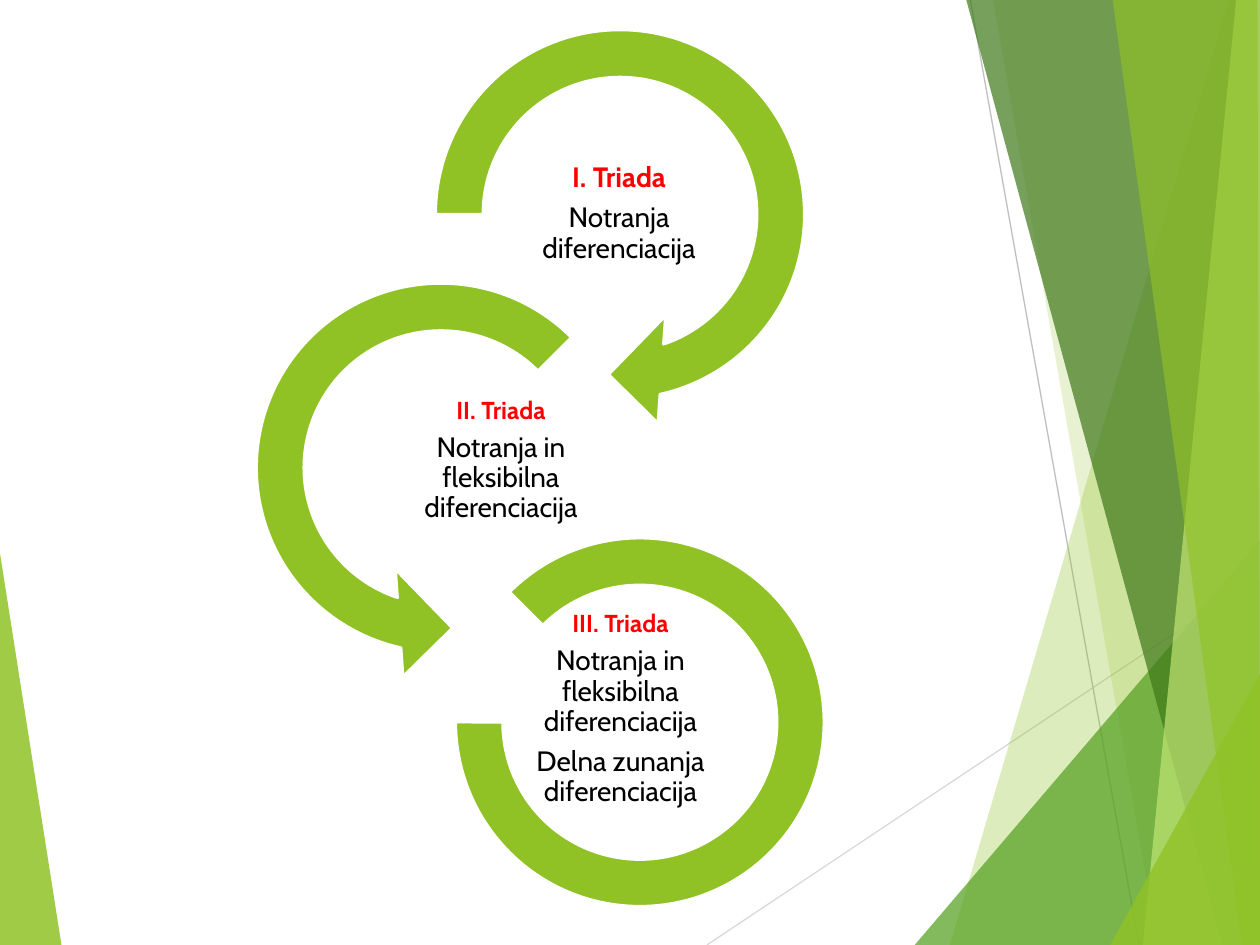
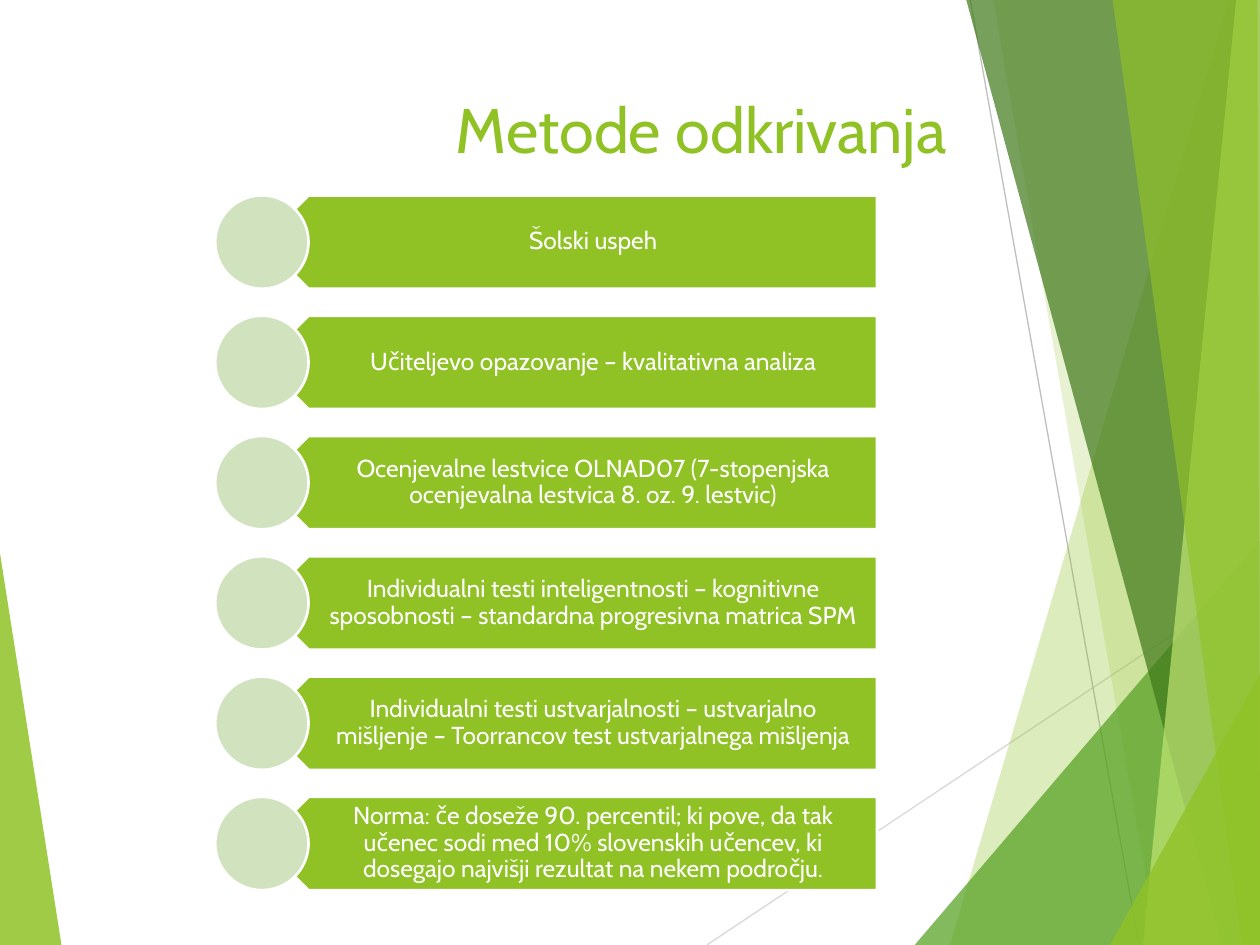
"""Build two slides on differentiation by triad and methods of identification."""
from lxml import etree
from pptx import Presentation
from pptx.dml.color import RGBColor
from pptx.enum.shapes import MSO_CONNECTOR, MSO_SHAPE
from pptx.enum.text import MSO_ANCHOR, PP_ALIGN
from pptx.oxml.ns import qn
from pptx.util import Cm, Pt

CENTER, RIGHT = PP_ALIGN.CENTER, PP_ALIGN.RIGHT
TOP, MIDDLE = MSO_ANCHOR.TOP, MSO_ANCHOR.MIDDLE
STRAIGHT = MSO_CONNECTOR.STRAIGHT
RIGHT_TURN = MSO_SHAPE.CIRCULAR_ARROW
LEFT_TURN = MSO_SHAPE.LEFT_CIRCULAR_ARROW
ARC = MSO_SHAPE.BLOCK_ARC
PLATE, DISC = MSO_SHAPE.PENTAGON, MSO_SHAPE.OVAL

FONT = "Cabin"
LIME = RGBColor(0x90, 0xC2, 0x26)
GREEN = RGBColor(0x54, 0xA0, 0x21)
FOREST = RGBColor(0x3F, 0x78, 0x19)
PALE_LIME = RGBColor(0xC0, 0xE4, 0x74)
PALE_GREEN = RGBColor(0xD1, 0xE3, 0xBE)
LIGHT_GREY = RGBColor(0xD9, 0xD9, 0xD9)
GREY = RGBColor(0xBF, 0xBF, 0xBF)
WHITE = RGBColor(0xFF, 0xFF, 0xFF)
BLACK = RGBColor(0, 0, 0)
RED = RGBColor(0xFF, 0, 0)

WIDTH, HEIGHT = 25.4, 19.05
TOP_RIGHT, BOTTOM_RIGHT = (WIDTH, 0), (WIDTH, HEIGHT)

RAYS = [
    ((14.25, HEIGHT), (WIDTH, 11.62), LIGHT_GREY),
    ((19.56, 0), (22.96, HEIGHT), GREY),
]
LEFT_WEDGE = ([(0, 11.15), (1.24, HEIGHT), (0, HEIGHT)], LIME, 85)
RIGHT_FACETS = [
    ([(24.77, 0), (19.15, HEIGHT), BOTTOM_RIGHT, TOP_RIGHT], LIME, 30),
    ([(20.02, 0), (23.34, HEIGHT), BOTTOM_RIGHT, TOP_RIGHT], LIME, 20),
    ([(18.44, HEIGHT), (WIDTH, 10.9), BOTTOM_RIGHT], GREEN, 72),
    ([(19.48, 0), (24.64, HEIGHT), BOTTOM_RIGHT, TOP_RIGHT], FOREST, 70),
    ([(24.92, 0), (23.04, HEIGHT), BOTTOM_RIGHT, TOP_RIGHT], PALE_LIME, 70),
    ([(22.43, 0), (25.04, HEIGHT), BOTTOM_RIGHT, (25.35, 0)], LIME, 65),
    ([(22.38, HEIGHT), (WIDTH, 13.59), BOTTOM_RIGHT], LIME, 80),
]


def paint(shape, color, outline=None, opacity=100):
    shape.shadow.inherit = False
    shape.fill.solid()
    shape.fill.fore_color.rgb = color
    if opacity < 100:
        tint = shape._element.spPr.find(qn("a:solidFill")).find(qn("a:srgbClr"))
        etree.SubElement(tint, qn("a:alpha"), val=str(opacity * 1000))
    if outline is None:
        shape.line.fill.background()
    else:
        shape.line.color.rgb = outline
        shape.line.width = Pt(1.5)


def add_text(page, frame, paragraphs, align=CENTER, anchor=MIDDLE,
             margins=(0.03, 0.03, 0.03, 0.03), line_spacing=0.9, gap=0.35):
    box = page.shapes.add_textbox(*(Cm(length) for length in frame))
    body = box.text_frame
    body.word_wrap = True
    body.vertical_anchor = anchor
    body.margin_left, body.margin_top, body.margin_right, body.margin_bottom = (
        Cm(margin) for margin in margins)
    for index, (text, size, color, bold) in enumerate(paragraphs):
        para = body.add_paragraph() if index else body.paragraphs[0]
        para.alignment = align
        para.line_spacing = line_spacing
        para.space_after = Pt(round(gap * size, 1))
        span = para.add_run()
        span.text = text
        span.font.name = FONT
        span.font.size = Pt(size)
        span.font.bold = bold
        span.font.color.rgb = color


deck = Presentation()
deck.slide_width, deck.slide_height = Cm(WIDTH), Cm(HEIGHT)
blank = deck.slide_layouts[6]
triad_page, methods_page = (deck.slides.add_slide(blank) for _ in range(2))

for page in (triad_page, methods_page):
    for start, end, color in RAYS:
        ray = page.shapes.add_connector(
            STRAIGHT, *(Cm(length) for length in start + end))
        ray.line.color.rgb = color
        ray.line.width = Pt(0.75)
        etree.SubElement(ray._element.spPr, qn("a:effectLst"))
    for points, color, opacity in [LEFT_WEDGE] + RIGHT_FACETS:
        corners = [(Cm(x), Cm(y)) for x, y in points]
        builder = page.shapes.build_freeform(*corners[0])
        builder.add_line_segments(corners[1:], close=True)
        paint(builder.convert_to_shape(), color, opacity=opacity)

TRIADS = [
    (RIGHT_TURN, (8.18, 0, 8.64), (0.11, 11.423, 45, 108, 0.125),
     (10.08, 3.12), "I. Triada", 16, ["Notranja diferenciacija"]),
    (LEFT_TURN, (4.57, 5.11, 8.64), (0.11, 11.423, 63, 189, 0.125),
     (7.7, 8.1), "II. Triada", 14, ["Notranja in fleksibilna diferenciacija"]),
    (ARC, (9.19, 10.85, 7.42), (135, 108, 0.127),
     (10.11, 13.11), "III. Triada", 14,
     ["Notranja in fleksibilna diferenciacija", "Delna zunanja diferenciacija"]),
]
for kind, (left, top, side), adjustments, corner, heading, size, lines in TRIADS:
    ring = triad_page.shapes.add_shape(kind, Cm(left), Cm(top), Cm(side), Cm(side))
    for index, value in enumerate(adjustments):
        ring.adjustments[index] = value
    paint(ring, LIME, WHITE)
    add_text(triad_page, corner + (4.8, 2.39),
             [(heading, size, RED, True)]
             + [(line, 16, BLACK, False) for line in lines])

add_text(methods_page, (1.7, 1.7, 17.63, 3.66),
         [("Metode odkrivanja", 36, LIME, False)], align=RIGHT, anchor=TOP,
         margins=(0.25, 0.13, 0.25, 0.13), line_spacing=1.0, gap=0)

METHODS = [
    "Šolski uspeh",
    "Učiteljevo opazovanje – kvalitativna analiza",
    "Ocenjevalne lestvice OLNAD07 (7-stopenjska ocenjevalna lestvica 8. oz. 9. lestvic)",
    "Individualni testi inteligentnosti – kognitivne sposobnosti – "
    "standardna progresivna matrica SPM",
    "Individualni testi ustvarjalnosti – ustvarjalno mišljenje – "
    "Toorrancov test ustvarjalnega mišljenja",
    "Norma: če doseže 90. percentil; ki pove, da tak učenec sodi med 10% "
    "slovenskih učencev, ki dosegajo najvišji rezultat na nekem področju.",
]
FIRST_ROW, ROW_STEP, ROW_HEIGHT = 3.94, 2.425, 1.88
for row, method in enumerate(METHODS):
    top = FIRST_ROW + row * ROW_STEP
    plate = methods_page.shapes.add_shape(
        PLATE, Cm(5.28), Cm(top), Cm(12.4), Cm(ROW_HEIGHT))
    plate.rotation = 180
    paint(plate, LIME, WHITE)
    add_text(methods_page, (5.74, top, 11.91, ROW_HEIGHT),
             [(method, 14, WHITE, False)], margins=(0.81, 0.15, 0.28, 0.15))
    disc = methods_page.shapes.add_shape(
        DISC, Cm(4.34), Cm(top), Cm(ROW_HEIGHT), Cm(ROW_HEIGHT))
    paint(disc, PALE_GREEN, WHITE)

deck.save("out.pptx")
